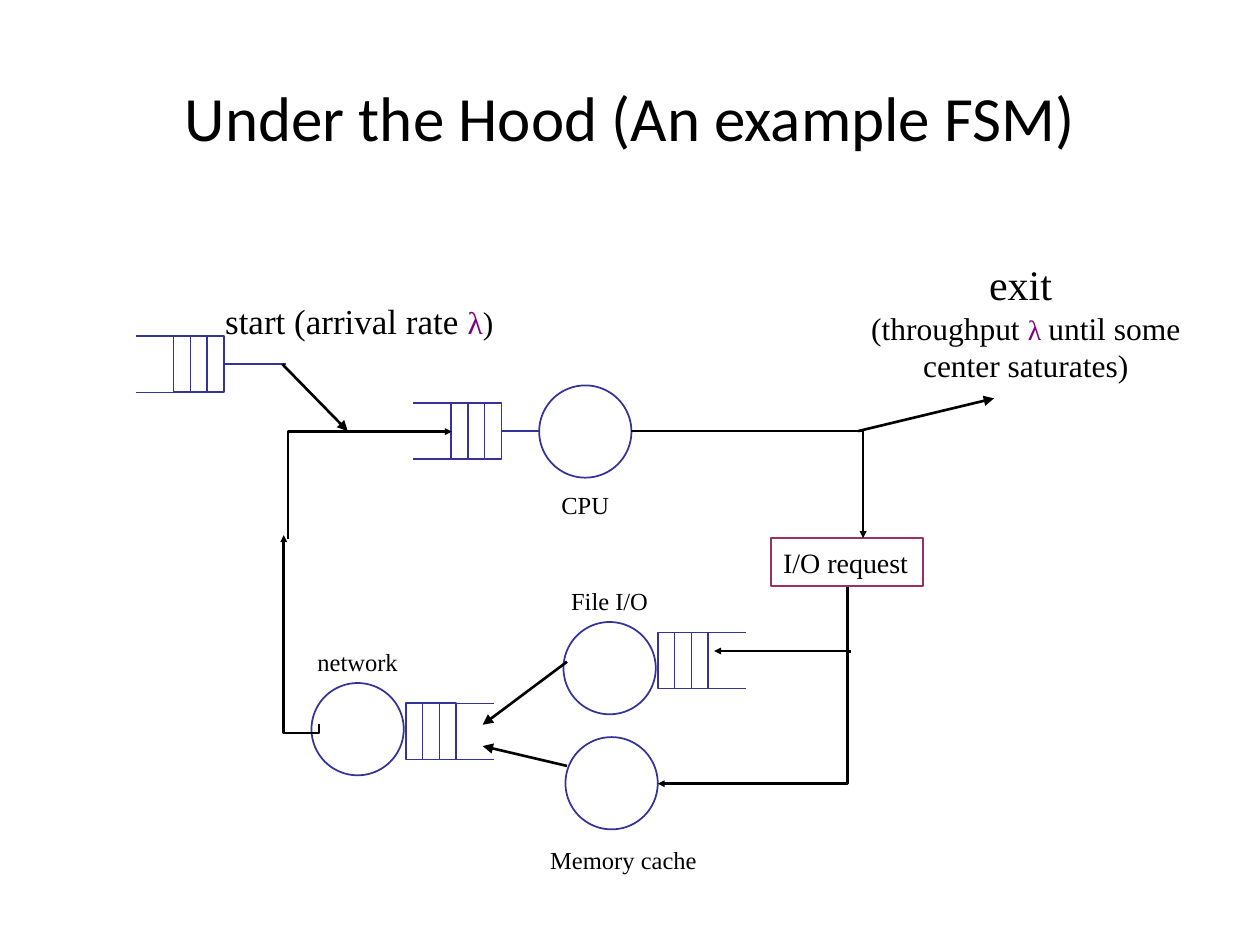
from lxml.etree import SubElement
from pptx import Presentation
from pptx.dml.color import RGBColor
from pptx.enum.shapes import MSO_CONNECTOR, MSO_SHAPE
from pptx.enum.text import MSO_ANCHOR, PP_ALIGN
from pptx.oxml.ns import qn
from pptx.util import Cm, Pt

BLACK = RGBColor(0x00, 0x00, 0x00)
WHITE = RGBColor(0xFF, 0xFF, 0xFF)
BLUE = RGBColor(0x33, 0x33, 0x99)
PLUM = RGBColor(0x99, 0x33, 0x66)
PURPLE = RGBColor(0x80, 0x00, 0x80)

SERIF = "Times New Roman"
DIAMETER = 1.86
SLOT_WIDTH, SLOT_HEIGHT, SLOT_COUNT = 0.34, 1.13, 3
RAIL = 0.76
LABEL_WIDTH, LABEL_HEIGHT = 3.6, 0.86


def outlined(slide, kind, left, top, width, height, color=BLUE):
    shape = slide.shapes.add_shape(kind, Cm(left), Cm(top), Cm(width), Cm(height))
    shape.shadow.inherit = False
    shape.fill.solid()
    shape.fill.fore_color.rgb = WHITE
    shape.line.color.rgb = color
    shape.line.width = Pt(1)
    return shape


def link(slide, kind, start_x, start_y, end_x, end_y, color=BLUE, weight=1, head=None):
    connector = slide.shapes.add_connector(
        kind, Cm(start_x), Cm(start_y), Cm(end_x), Cm(end_y))
    connector.line.color.rgb = color
    connector.line.width = Pt(weight)
    properties = connector._element.spPr
    if head:
        SubElement(properties.find(qn("a:ln")), qn("a:tailEnd"),
                   type="triangle", w=head, len=head)
    SubElement(properties, qn("a:effectLst"))
    return connector


def elbow(slide, left, top, width, height, turn=0, flipped=False, bend=None):
    connector = link(slide, MSO_CONNECTOR.ELBOW, left, top, left + width, top + height,
                     BLACK, 1.5, "sm")
    properties = connector._element.spPr
    frame = properties.find(qn("a:xfrm"))
    frame.set("rot", str(turn * 60000))
    if flipped:
        frame.set("flipV", "1")
    geometry = properties.find(qn("a:prstGeom"))
    if bend is None:
        geometry.set("prst", "bentConnector2")
    else:
        SubElement(geometry.find(qn("a:avLst")), qn("a:gd"),
                   name="adj1", fmla=f"val {bend}")


def write(frame, lines, align=PP_ALIGN.CENTER):
    frame.word_wrap = False
    for number, (size, pieces) in enumerate(lines):
        paragraph = frame.paragraphs[0] if number == 0 else frame.add_paragraph()
        paragraph.alignment = align
        paragraph.font.name = SERIF
        paragraph.font.size = Pt(size)
        paragraph.font.color.rgb = BLACK
        for text, piece_size, color in pieces:
            run = paragraph.add_run()
            run.text = text
            if piece_size != size:
                run.font.size = Pt(piece_size)
            if color != BLACK:
                run.font.color.rgb = color


def text_box(slide, left, top, width, height, lines, align=PP_ALIGN.CENTER):
    box = slide.shapes.add_textbox(Cm(left), Cm(top), Cm(width), Cm(height))
    write(box.text_frame, lines, align)


def draw_title(slide, left, top, width, height):
    title = slide.shapes.add_textbox(Cm(left), Cm(top), Cm(width), Cm(height))
    title.text_frame.word_wrap = True
    title.text_frame.vertical_anchor = MSO_ANCHOR.MIDDLE
    paragraph = title.text_frame.paragraphs[0]
    paragraph.text = "Under the Hood (An example FSM)"
    paragraph.alignment = PP_ALIGN.CENTER
    paragraph.font.name = "Calibri"
    paragraph.font.size = Pt(36)
    paragraph.font.color.rgb = BLACK


def draw_queue(slide, left, top, mirrored=False):
    slots_width = SLOT_COUNT * SLOT_WIDTH
    slots_left = left if mirrored else left + RAIL
    rail_left = left + slots_width if mirrored else left
    for slot in range(SLOT_COUNT):
        outlined(slide, MSO_SHAPE.RECTANGLE, slots_left + slot * SLOT_WIDTH, top,
                 SLOT_WIDTH, SLOT_HEIGHT)
    for rail_top in (top, top + SLOT_HEIGHT):
        link(slide, MSO_CONNECTOR.STRAIGHT, rail_left, rail_top,
             rail_left + RAIL, rail_top)
    if not mirrored:
        outlet_x, outlet_y = slots_left + slots_width, top + SLOT_HEIGHT / 2
        link(slide, MSO_CONNECTOR.STRAIGHT, outlet_x, outlet_y,
             outlet_x + 1.25, outlet_y)


def draw_station(slide, left, top, name, label_y, label_x=0, queue=None):
    if queue:
        queue_x, queue_y, mirrored = queue
        draw_queue(slide, left + queue_x, top + queue_y, mirrored)
    outlined(slide, MSO_SHAPE.OVAL, left, top, DIAMETER, DIAMETER)
    text_box(slide, left + label_x + (DIAMETER - LABEL_WIDTH) / 2, top + label_y,
             LABEL_WIDTH, LABEL_HEIGHT, [(14, [(name, 14, BLACK)])])


def draw_request(slide, left, top):
    request = outlined(slide, MSO_SHAPE.RECTANGLE, left, top, 3.07, 0.97, PLUM)
    request.text_frame.vertical_anchor = MSO_ANCHOR.MIDDLE
    write(request.text_frame, [(16, [("I/O request", 16, BLACK)])], PP_ALIGN.LEFT)


def draw_ends(slide, left, top):
    draw_queue(slide, left, top + 1.78)
    text_box(slide, left + 1.55, top + 0.92, 6.07, 2.11, [
        (20, [("start (arrival rate ", 20, BLACK), ("λ", 18, PURPLE), (")", 18, BLACK)]),
    ], PP_ALIGN.LEFT)
    text_box(slide, left + 14.56, top + 0.08, 6.76, 3.99, [
        (24, [("exit ", 24, BLACK)]),
        (18, [("(throughput ", 18, BLACK), ("λ ", 16, PURPLE), ("until some", 18, BLACK)]),
        (18, [("center saturates)", 18, BLACK)]),
    ])


def draw_flow(slide, left, top):
    for start_x, start_y, end_x, end_y in (
        (14.56, 3.69, 17.3, 3.03),
        (2.95, 2.34, 4.27, 3.69),
        (8.69, 8.34, 6.99, 9.61),
        (8.69, 10.44, 6.99, 10.04),
    ):
        link(slide, MSO_CONNECTOR.STRAIGHT, left + start_x, top + start_y,
             left + end_x, top + end_y, BLACK, 1.5, "med")
    for x, y, *route in (
        (9.99, 3.69, 4.67, 2.16),
        (12.35, 6.13, 1.3, 2.69, 90),
        (3.64, 3.13, 2.16, 3.3, 270),
        (10.52, 8.13, 3.89, 2.67, 180, True, 1600),
        (1.43, 7.34, 3.81, 0.71, 270, True, -4600),
    ):
        elbow(slide, left + x, top + y, *route)


def draw_machine(slide, left, top):
    draw_ends(slide, left, top)
    draw_station(slide, left + 8.13, top + 2.77, "CPU", 1.98, queue=(-2.54, 0.36, False))
    draw_station(slide, left + 8.62, top + 7.54, "File I/O", -0.86, queue=(1.9, 0.21, True))
    draw_station(slide, left + 8.66, top + 9.86, "Memory cache", 2.06, label_x=0.24)
    draw_station(slide, left + 3.54, top + 8.77, "network", -0.86, queue=(1.9, 0.41, True))
    draw_request(slide, left + 12.8, top + 5.85)
    draw_flow(slide, left, top)


def main():
    deck = Presentation()
    deck.slide_width, deck.slide_height = Cm(25.4), Cm(19.05)
    slide = deck.slides.add_slide(deck.slide_layouts[6])
    draw_title(slide, 1.27, 0.76, 22.86, 3.18)
    draw_machine(slide, 2.74, 5)
    deck.save("out.pptx")


if __name__ == "__main__":
    main()
